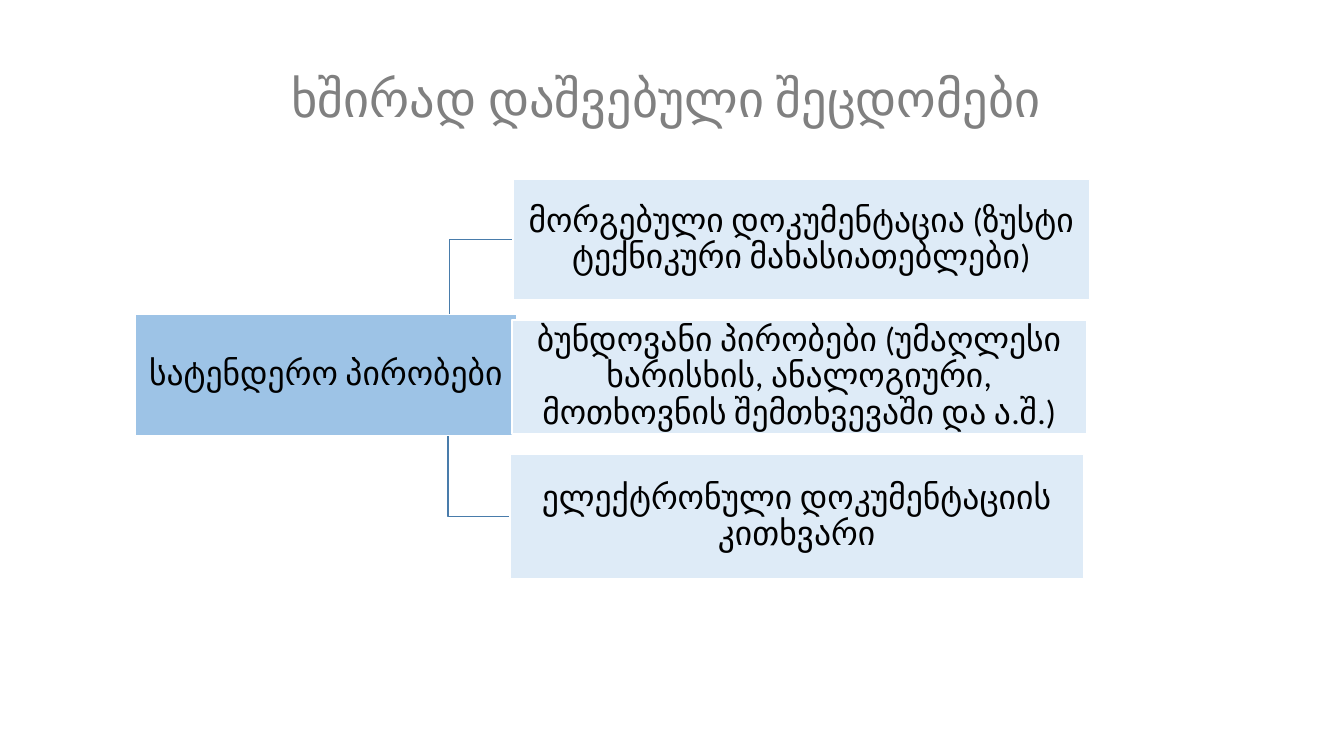
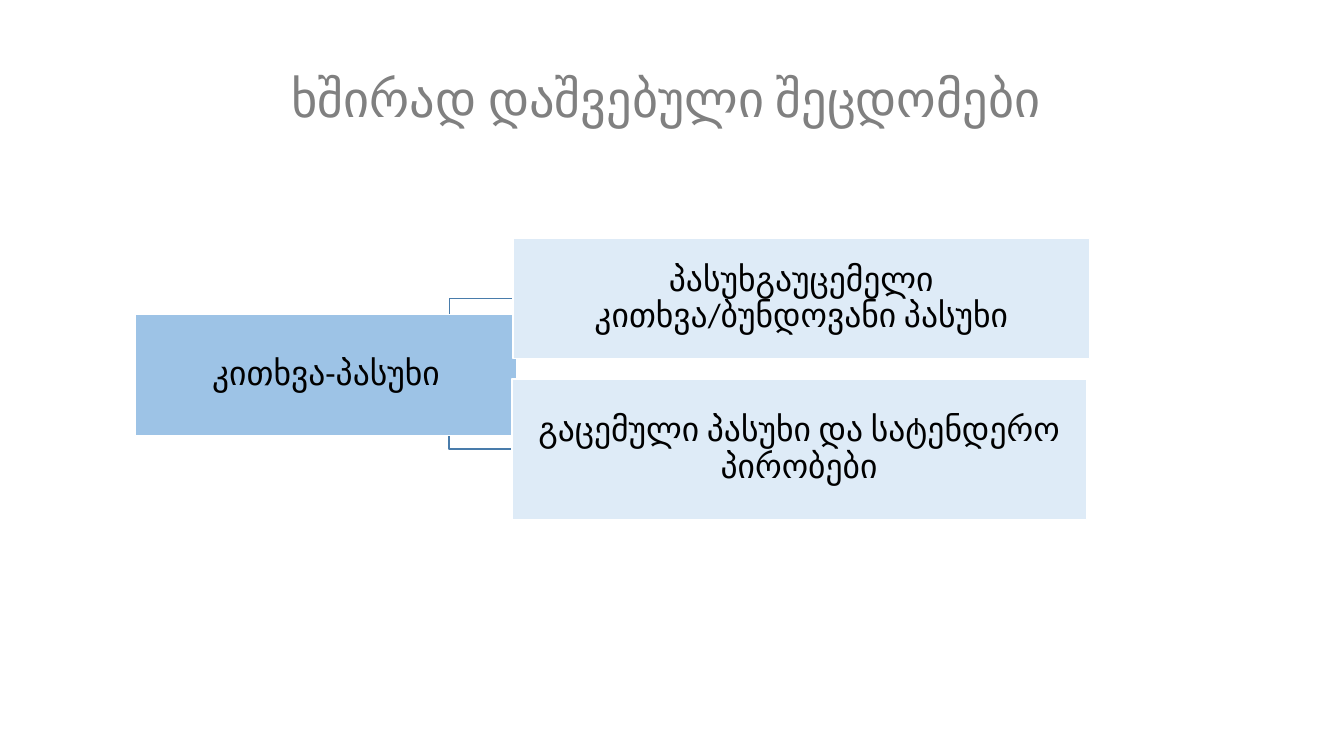
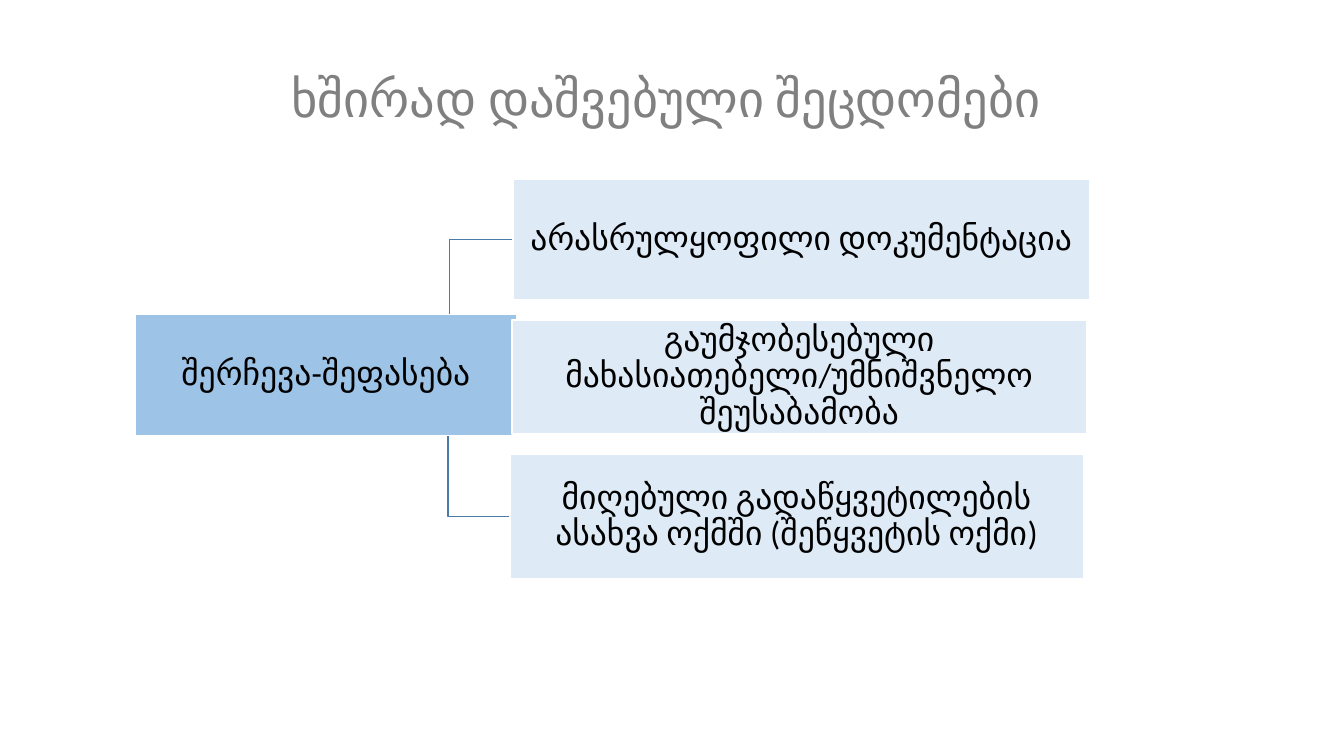
from dataclasses import dataclass

from lxml import etree
from pptx import Presentation
from pptx.dml.color import RGBColor as RGB
from pptx.enum.shapes import MSO_CONNECTOR as CONN, MSO_SHAPE as SHAPE
from pptx.enum.text import MSO_ANCHOR as ANCHOR, MSO_AUTO_SIZE as AUTO, PP_ALIGN as ALIGN
from pptx.oxml.ns import qn
from pptx.util import Cm, Pt


@dataclass(frozen=True)
class Theme:
    font: str = "Calibri"
    title_size: Pt = Pt(36)
    box_size: Pt = Pt(24)
    line_width: Pt = Pt(1)
    line_spacing: float = 0.9
    title: RGB = RGB(0x80, 0x80, 0x80)
    text: RGB = RGB(0x00, 0x00, 0x00)
    topic: RGB = RGB(0x9D, 0xC3, 0xE6)
    mistake: RGB = RGB(0xDE, 0xEB, 0xF7)
    border: RGB = RGB(0xFF, 0xFF, 0xFF)
    connector: RGB = RGB(0x49, 0x7C, 0xAB)


T = Theme()
TITLE = "ხშირად დაშვებული შეცდომები"

# Lengths in centimetres
TOPIC_BOX = (3.4, 7.92, 9.63, 3.05)
BRANCH_START = (9.73, 9.45)
STACK_MIDDLE = 9.55
STACK_GAP = 0.52
COLUMNS = [(12.93, 14.53), (12.9, 14.48), (12.85, 14.45)]  # left, width

# Topic, then its mistakes as (box height, text)
SLIDES = [
    ("სატენდერო პირობები", [
        (3.02, "მორგებული დოკუმენტაცია (ზუსტი ტექნიკური მახასიათებლები)"),
        (2.87, "ბუნდოვანი პირობები (უმაღლესი ხარისხის, ანალოგიური, მოთხოვნის შემთხვევაში და ა.შ.)"),
        (3.12, "ელექტრონული დოკუმენტაციის კითხვარი"),
    ]),
    ("კითხვა-პასუხი", [
        (3.02, "პასუხგაუცემელი კითხვა/ბუნდოვანი პასუხი"),
        (3.53, "გაცემული პასუხი და სატენდერო პირობები"),
    ]),
    ("შერჩევა-შეფასება", [
        (3.02, "არასრულყოფილი დოკუმენტაცია"),
        (2.87, "გაუმჯობესებული მახასიათებელი/უმნიშვნელო შეუსაბამობა"),
        (3.12, "მიღებული გადაწყვეტილების ასახვა ოქმში (შეწყვეტის ოქმი)"),
    ]),
]


def write(tf, text, size, color):
    """Fill a text frame with one centred paragraph."""
    tf.word_wrap = True
    tf.auto_size = AUTO.NONE
    tf.text = text
    p = tf.paragraphs[0]
    p.alignment = ALIGN.CENTER
    p.line_spacing = T.line_spacing
    p.font.name = T.font
    p.font.size = size
    p.font.color.rgb = color


def add_box(slide, box, fill, text):
    sp = slide.shapes.add_shape(SHAPE.RECTANGLE, *map(Cm, box))
    sp.shadow.inherit = False
    sp.fill.solid()
    sp.fill.fore_color.rgb = fill
    sp.line.color.rgb = T.border
    sp.line.width = T.line_width
    tf = sp.text_frame
    tf.margin_left = tf.margin_right = tf.margin_top = tf.margin_bottom = Cm(0.05)
    tf.vertical_anchor = ANCHOR.MIDDLE
    write(tf, text, T.box_size, T.text)


prs = Presentation()
prs.slide_width, prs.slide_height = Cm(33.87), Cm(19.05)

for topic, mistakes in SLIDES:
    slide = prs.slides.add_slide(prs.slide_layouts[5])

    title = slide.shapes.title
    title.left, title.top, title.width, title.height = Cm(4.24), Cm(0.46), Cm(25.4), Cm(4.29)
    tf = title.text_frame
    tf.vertical_anchor = ANCHOR.BOTTOM
    tf.margin_right, tf.margin_bottom = Cm(0.56), Cm(1.52)
    write(tf, TITLE, T.title_size, T.title)

    # Stack the mistakes around a common middle
    total = sum(height for height, _ in mistakes) + STACK_GAP * (len(mistakes) - 1)
    top = STACK_MIDDLE - total / 2
    boxes = []
    for (left, width), (height, _) in zip(COLUMNS, mistakes):
        boxes.append((left, top, width, height))
        top += height + STACK_GAP

    # Only the outer boxes show a branch
    for left, top, _, height in (boxes[-1], boxes[0]):
        branch = slide.shapes.add_connector(
            CONN.ELBOW, *map(Cm, BRANCH_START), Cm(left), Cm(top + height / 2))
        branch.line.color.rgb = T.connector
        branch.line.width = T.line_width
        etree.SubElement(branch._element.spPr, qn("a:effectLst"))

    add_box(slide, TOPIC_BOX, T.topic, topic)
    for box, (_, text) in zip(boxes, mistakes):
        add_box(slide, box, T.mistake, text)

prs.save("out.pptx")
